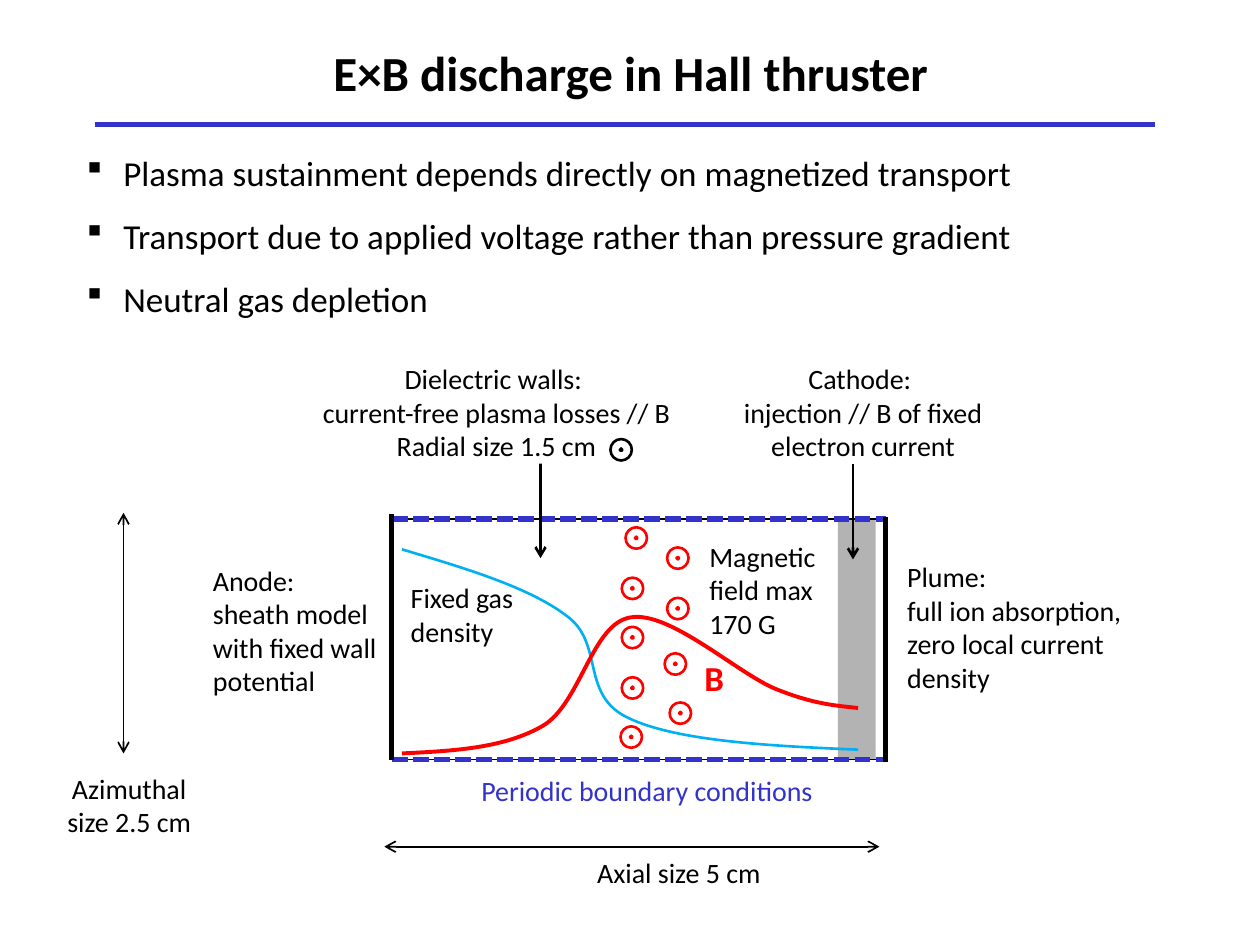
import collections

import lxml.etree
import pptx
import pptx.dml.color
import pptx.enum.dml
import pptx.enum.shapes
import pptx.enum.text
import pptx.oxml.ns
import pptx.util

Inches = pptx.util.Inches
Pt = pptx.util.Pt
qn = pptx.oxml.ns.qn
ALIGN = pptx.enum.text.PP_ALIGN
RECTANGLE = pptx.enum.shapes.MSO_SHAPE.RECTANGLE
STRAIGHT = pptx.enum.shapes.MSO_CONNECTOR.STRAIGHT

BLACK, WHITE, RED, BLUE = "000000", "FFFFFF", "FF0000", "3333CC"
GAS_BLUE, CATHODE_GRAY = "00B0F0", "B3B3B3"


class Box(collections.namedtuple("Box", "left top width height")):
    def inner(self, dx, dy, width, height):
        return Box(self.left + dx, self.top + dy, width, height)

    def point(self, dx, dy):
        return self.left + dx, self.top + dy

    def inches(self):
        return [Inches(length) for length in self]


def color(hex_string):
    return pptx.dml.color.RGBColor.from_string(hex_string)


def add_child(parent, tag, **attributes):
    return lxml.etree.SubElement(parent, qn(tag), attributes)


def set_line(shape, hex_string, points):
    shape.line.color.rgb = color(hex_string)
    shape.line.width = Pt(points)


def write(shape, text, size=16, hex_string=BLACK, bold=False, align=ALIGN.LEFT, inset=0):
    frame = shape.text_frame
    frame.word_wrap = True
    frame.auto_size = pptx.enum.text.MSO_AUTO_SIZE.SHAPE_TO_FIT_TEXT
    frame.vertical_anchor = pptx.enum.text.MSO_ANCHOR.TOP
    frame.margin_left = frame.margin_right = Inches(inset)
    frame.margin_top = frame.margin_bottom = Inches(inset / 2)
    frame.text = text
    for paragraph in frame.paragraphs:
        paragraph.alignment = align
        for run in paragraph.runs:
            run.font.name = "Calibri"
            run.font.size = Pt(size)
            run.font.bold = bold
            run.font.color.rgb = color(hex_string)
    return frame


def add_label(slide, box, text, **style):
    return write(slide.shapes.add_textbox(*box.inches()), text, **style)


def add_rectangle(slide, box, fill=None):
    rectangle = slide.shapes.add_shape(RECTANGLE, *box.inches())
    rectangle.shadow.inherit = False
    if fill:
        rectangle.fill.solid()
        rectangle.fill.fore_color.rgb = color(fill)
    else:
        rectangle.fill.background()
    rectangle.line.fill.background()
    return rectangle


def add_line(slide, start, end, hex_string=BLACK, points=3, dashed=False, arrows=()):
    """Draw a straight line; arrows names its ends: headEnd (start), tailEnd (end)."""
    ends = [Inches(length) for length in (*start, *end)]
    line = slide.shapes.add_connector(STRAIGHT, *ends)
    set_line(line, hex_string, points)
    if dashed:
        line.line.dash_style = pptx.enum.dml.MSO_LINE.SQUARE_DOT
    for end_name in arrows:
        add_child(line.line._get_or_add_ln(), f"a:{end_name}", type="arrow")
    add_child(line._element.spPr, "a:effectLst")


def add_curves(slide, contours, hex_string, points, close=False):
    """Draw chains of cubic Bezier knots as one unfilled shape."""
    contours = [[(Inches(x), Inches(y)) for x, y in contour] for contour in contours]
    builder = slide.shapes.build_freeform(*contours[0][0])
    for index, contour in enumerate(contours):
        if index:
            builder.move_to(*contour[0])
        builder.add_line_segments(contour[1:], close=close)
    outline = builder.convert_to_shape()
    segments = list(outline._element.iter(qn("a:lnTo")))
    for first in range(0, len(segments), 3):
        bezier = lxml.etree.Element(qn("a:cubicBezTo"))
        segments[first].addprevious(bezier)
        for segment in segments[first:first + 3]:
            bezier.append(segment[0])
            segment.getparent().remove(segment)
    outline.shadow.inherit = False
    outline.fill.background()
    set_line(outline, hex_string, points)


def circle(center, radius):
    """Return the Bezier knots of a circle, quarter by quarter."""
    x, y = center
    handle = 0.55 * radius
    knots = [(x - radius, y)]
    for dx, dy in ((-1, 0), (0, -1), (1, 0), (0, 1)):
        end_dx, end_dy = -dy, dx
        end = (x + radius * end_dx, y + radius * end_dy)
        knots += [(x + radius * dx + handle * end_dx, y + radius * dy + handle * end_dy),
                  (end[0] + handle * dx, end[1] + handle * dy), end]
    return knots


def add_field_symbol(slide, center, hex_string):
    """Draw the circled dot of a field pointing out of the plane."""
    add_curves(slide, [circle(center, 0.17 / 2), circle(center, 0.01)], hex_string, 1.5, True)


def add_header(slide, box):
    add_label(slide, box, "E×B discharge in Hall thruster", size=28, bold=True,
              align=ALIGN.CENTER, inset=0.1)
    add_line(slide, box.point(0.58, 0.7), box.point(9, 0.7), BLUE)


def add_bullets(slide, box, items):
    frame = add_label(slide, box, "\n".join(items), size=20, inset=0.1)
    for paragraph in frame.paragraphs:
        properties = paragraph._p.get_or_add_pPr()
        properties.set("marL", str(Inches(0.29)))
        properties.set("indent", str(-Inches(0.29)))
        add_child(properties, "a:buFont", typeface="Wingdings", charset="2")
        add_child(properties, "a:buChar", char="§")
        paragraph.space_after = Pt(12)


def add_channel(slide, box):
    """Draw the discharge channel with its walls, field symbols and profiles."""
    add_rectangle(slide, box.inner(3.54, 0, 0.3, box.height), CATHODE_GRAY)
    set_line(add_rectangle(slide, box), BLACK, 0.75)
    for y in (0, box.height):
        add_line(slide, box.point(0, y), box.point(box.width, y), BLUE, dashed=True)
    add_line(slide, box.point(0, -0.04), box.point(0, box.height))
    add_line(slide, box.point(box.width, -0.02), box.point(box.width, box.height + 0.02))

    add_label(slide, box.inner(0.15, 0.49, 0.88, 0.54), "Fixed gas density")
    add_label(slide, box.inner(2.52, 0.16, 0.9, 0.81), "Magnetic field max 170 G")
    add_label(slide, box.inner(2.48, 1.09, 0.27, 0.34), "B", size=20, hex_string=RED, bold=True)

    field_symbols = [(1.94, 0.15), (1.91, 0.55), (1.91, 0.94), (1.91, 1.34), (1.9, 1.73),
                     (2.27, 0.31), (2.27, 0.71), (2.25, 1.15), (2.29, 1.54)]
    for center in field_symbols:
        add_field_symbol(slide, box.point(*center), RED)

    gas_density = [(0.08, 0.24), (0.58, 0.39), (1.09, 0.54), (1.39, 0.77), (1.69, 0.99),
                   (1.49, 1.4), (1.88, 1.58), (2.26, 1.76), (2.98, 1.8), (3.7, 1.83)]
    magnetic_field = [(0.08, 1.86), (0.49, 1.84), (0.89, 1.82), (1.2, 1.64), (1.5, 1.46),
                      (1.59, 0.82), (1.9, 0.78), (2.21, 0.73), (2.75, 1.23), (3.05, 1.35),
                      (3.35, 1.47), (3.52, 1.48), (3.7, 1.5)]
    for knots, hex_string, points in ((gas_density, GAS_BLUE, 1.5), (magnetic_field, RED, 2.25)):
        add_curves(slide, [[box.point(*knot) for knot in knots]], hex_string, points)


def add_thruster_model(slide, box):
    """Place the channel with the labels and dimension arrows around it."""
    add_channel(slide, box.inner(2.68, 1.25, 3.92, 1.91))

    for start, end in (((6.34, 0.81), (6.34, 1.57)), ((3.86, 0.78), (3.86, 1.56))):
        add_line(slide, box.point(*start), box.point(*end), points=1.5, arrows=["tailEnd"])
    for start, end in (((2.62, 3.85), (6.55, 3.85)), ((0.55, 3.11), (0.55, 1.2))):
        add_line(slide, box.point(*start), box.point(*end), points=1,
                 arrows=["headEnd", "tailEnd"])

    callouts = [
        ((2.06, 0, 2.9, 0.81),
         "Dielectric walls: \ncurrent-free plasma losses // B\nRadial size 1.5 cm"),
        ((5.12, 0, 2.6, 0.81), "Cathode: \ninjection // B of fixed electron current"),
    ]
    for place, text in callouts:
        write(add_rectangle(slide, box.inner(*place), WHITE), text, align=ALIGN.CENTER)
    add_field_symbol(slide, box.point(4.5, 0.7), BLACK)

    labels = [
        ((1.26, 1.6, 1.34, 1.08), "Anode:\nsheath model with fixed wall potential", {}),
        ((6.77, 1.57, 2.05, 1.08),
         "Plume:\nfull ion absorption, zero local current density", {}),
        ((0, 3.25, 1.19, 0.54), "Azimuthal size 2.5 cm", {"align": ALIGN.CENTER}),
        ((3.39, 3.27, 2.71, 0.27), "Periodic boundary conditions", {"hex_string": BLUE}),
        ((4.31, 3.92, 1.6, 0.27), "Axial size 5 cm", {}),
    ]
    for place, text, style in labels:
        add_label(slide, box.inner(*place), text, **style)


def main():
    deck = pptx.Presentation()
    deck.slide_width, deck.slide_height = Inches(10), Inches(7.5)
    slide = deck.slides.add_slide(deck.slide_layouts[6])
    add_header(slide, Box(0.17, 0.29, 9.67, 0.57))
    add_bullets(slide, Box(0.59, 1.15, 8.86, 1.45), [
        "Plasma sustainment depends directly on magnetized transport",
        "Transport due to applied voltage rather than pressure gradient",
        "Neutral gas depletion",
    ])
    add_thruster_model(slide, Box(0.43, 2.87, 8.82, 4.19))
    deck.save("out.pptx")


if __name__ == "__main__":
    main()
